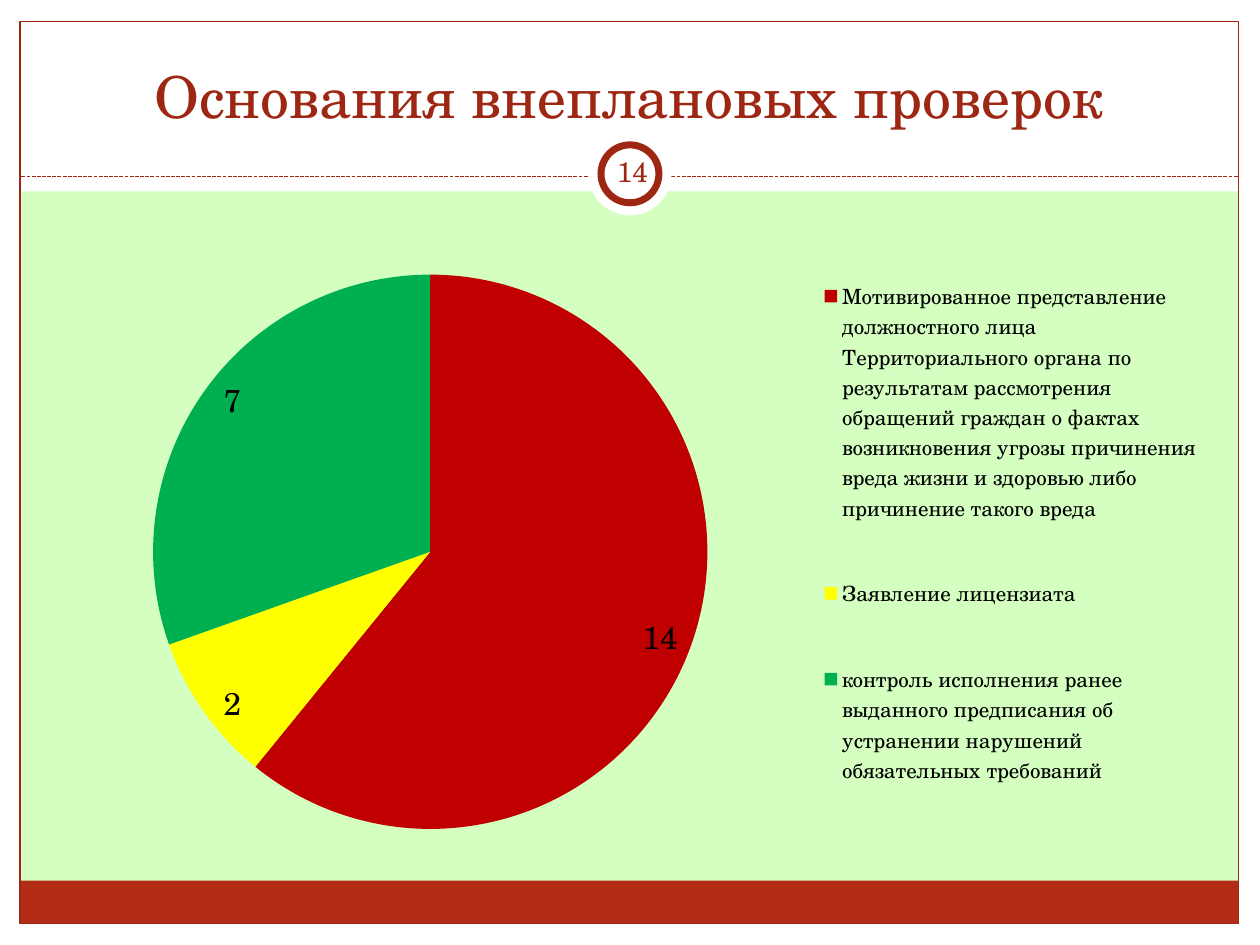
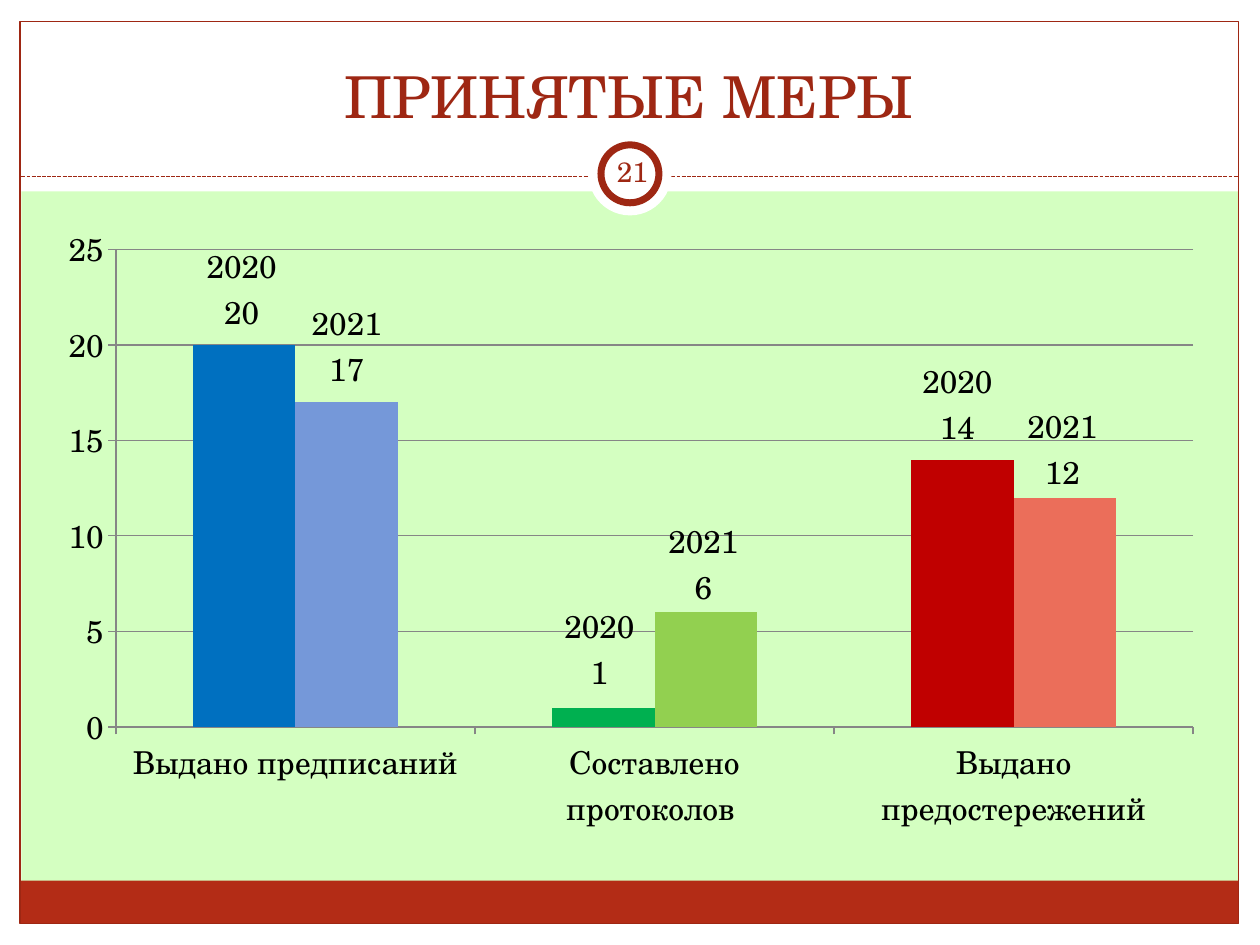
from lxml import etree
from pptx import Presentation
from pptx.chart.data import CategoryChartData
from pptx.dml.color import RGBColor
from pptx.enum.chart import XL_CHART_TYPE, XL_LABEL_POSITION, XL_LEGEND_POSITION, XL_TICK_MARK
from pptx.enum.dml import MSO_LINE
from pptx.enum.shapes import MSO_CONNECTOR, MSO_SHAPE
from pptx.enum.text import MSO_ANCHOR, PP_ALIGN
from pptx.oxml.ns import qn
from pptx.util import Inches, Pt

RECTANGLE, ELLIPSE = MSO_SHAPE.RECTANGLE, MSO_SHAPE.OVAL
PIE, COLUMNS = XL_CHART_TYPE.PIE, XL_CHART_TYPE.COLUMN_CLUSTERED
BEST_FIT, OUTSIDE_END = XL_LABEL_POSITION.BEST_FIT, XL_LABEL_POSITION.OUTSIDE_END
TICK_OUTSIDE = XL_TICK_MARK.OUTSIDE

FONT = "TeX Gyre Schola"
CHART_SIZE = (9.3, 5)
COLORS = {
    "background": "D4FFC1", "white": "FFFFFF", "black": "000000",
    "accent": "9E2713", "footer": "B32C16", "axis": "868686",
    "red": "C00000", "yellow": "FFFF00", "green": "00B050",
    "blue": "0070C0", "light blue": "7598D9",
    "light green": "92D050", "light red": "EB6E5A",
}
COLORS = {name: RGBColor.from_string(value) for name, value in COLORS.items()}


def write_text(shape, text, size, anchor):
    frame = shape.text_frame
    frame.word_wrap = True
    frame.vertical_anchor = anchor
    paragraph = frame.paragraphs[0]
    paragraph.alignment = PP_ALIGN.CENTER
    run = paragraph.add_run()
    run.text = text
    run.font.name, run.font.size = FONT, Pt(size)
    run.font.color.rgb = COLORS["accent"]


def set_layout(parent, inches, modes=(), after=None):
    """Place a chart part by inches within the chart: x, y and maybe w, h."""
    for old in parent.findall(qn("c:layout")):
        parent.remove(old)
    layout = etree.Element(qn("c:layout"))
    manual = etree.SubElement(layout, qn("c:manualLayout"))
    fractions = [value / CHART_SIZE[i % 2] for i, value in enumerate(inches)]
    for tag, value in [*modes, *zip("xywh", fractions)]:
        etree.SubElement(manual, qn(f"c:{tag}")).set("val", str(value))
    if after is None:
        parent.insert(0, layout)
    else:
        after.addnext(layout)


EDGE = [("xMode", "edge"), ("yMode", "edge")]
INNER_EDGE = [("layoutTarget", "inner"), *EDGE]

presentation = Presentation()
presentation.slide_width, presentation.slide_height = Inches(10), Inches(7.5)
title_layout = presentation.slide_layouts[5]
title_layout.background.fill.solid()
title_layout.background.fill.fore_color.rgb = COLORS["background"]

# Slides with title and page number
pages = [("Основания внеплановых проверок", "14"), ("ПРИНЯТЫЕ МЕРЫ", "21")]
slides = []
for title_text, number in pages:
    slide = presentation.slides.add_slide(title_layout)
    slides.append(slide)
    title = slide.shapes.title
    title.left, title.top = Inches(0.33), Inches(0.25)
    title.width, title.height = Inches(9.33), Inches(0.83)
    write_text(title, title_text, 33, MSO_ANCHOR.BOTTOM)
    badge = slide.shapes.add_textbox(Inches(4.77), Inches(1.12), Inches(0.5), Inches(0.48))
    frame = badge.text_frame
    frame.margin_left = frame.margin_right = Inches(0.05)
    frame.margin_top = frame.margin_bottom = Inches(0.05)
    write_text(badge, number, 16, MSO_ANCHOR.MIDDLE)

# Shared frame: drawn once, then moved into the layout
frame_shapes = [
    (RECTANGLE, (0, 7.33, 10, 0.17), "white", None),
    (RECTANGLE, (0, 0, 10, 1.52), "white", None),
    (RECTANGLE, (0, 0, 0.17, 7.5), "white", None),
    (RECTANGLE, (9.83, 0, 0.17, 7.5), "white", None),
    (RECTANGLE, (0.16, 6.99, 9.67, 0.34), "footer", None),
    (RECTANGLE, (0.16, 0.17, 9.67, 7.16), None, 0.75),
    (ELLIPSE, (4.67, 1.05, 0.66, 0.66), "white", None),
    (ELLIPSE, (4.77, 1.15, 0.46, 0.46), "white", 4),
]
decorations = []
for preset, box, fill, line_width in frame_shapes:
    shape = slides[0].shapes.add_shape(preset, *map(Inches, box))
    shape.shadow.inherit = False
    if fill:
        shape.fill.solid()
        shape.fill.fore_color.rgb = COLORS[fill]
    else:
        shape.fill.background()
    if line_width:
        shape.line.color.rgb = COLORS["accent"]
        shape.line.width = Pt(line_width)
    else:
        shape.line.fill.background()
    decorations.append(shape)

divider = slides[0].shapes.add_connector(
    MSO_CONNECTOR.STRAIGHT, Inches(0.17), Inches(1.4), Inches(9.83), Inches(1.4))
divider.line.color.rgb = COLORS["accent"]
divider.line.width = Pt(0.75)
divider.line.dash_style = MSO_LINE.SQUARE_DOT
properties = divider.element.find(qn("p:spPr"))
etree.SubElement(properties, qn("a:effectLst"))
decorations.insert(6, divider)  # below the badge circles

for shape_id, shape in enumerate(decorations, start=100):
    next(shape.element.iter(qn("p:cNvPr"))).set("id", str(shape_id))
    title_layout.shapes.element.append(shape.element)

# Charts
chart_specs = [
    {
        "type": PIE, "corner": (0.33, 1.67), "plot": (0.04, 0.51, 6.09, 4.4),
        "categories": [
            "Мотивированное представление должностного лица Территориального органа "
            "по результатам рассмотрения обращений граждан о фактах возникновения "
            "угрозы причинения вреда жизни и здоровью либо причинение такого вреда",
            "Заявление лицензиата",
            "контроль исполнения ранее выданного предписания об устранении нарушений "
            "обязательных требований",
        ],
        "series": [("Основания", (14, 2, 7), ("red", "yellow", "green"))],
        "label position": BEST_FIT,
    },
    {
        "type": COLUMNS, "corner": (0.35, 1.7), "plot": (0.57, 0.28, 8.55, 3.79),
        "categories": ["Выдано предписаний", "Составлено протоколов ", "Выдано предостережений"],
        "series": [("2020", (20, 1, 14), ("blue", "green", "red")),
                   ("2021", (17, 6, 12), ("light blue", "light green", "light red"))],
        "label position": OUTSIDE_END,
    },
]
charts = []
for slide, settings in zip(slides, chart_specs):
    data = CategoryChartData()
    data.categories = settings["categories"]
    for name, values, _ in settings["series"]:
        data.add_series(name, values)
    chart = slide.shapes.add_chart(
        settings["type"], *map(Inches, settings["corner"] + CHART_SIZE), data).chart
    charts.append(chart)
    chart.has_title = chart.has_legend = False
    chart.font.name, chart.font.size = FONT, Pt(18)
    chart.font.color.rgb = COLORS["black"]
    set_layout(next(chart.element.iter(qn("c:plotArea"))), settings["plot"], INNER_EDGE)
    chart.plots[0].vary_by_categories = settings["type"] == PIE
    for series, (_, _, point_colors) in zip(chart.plots[0].series, settings["series"]):
        for index, color in enumerate(point_colors):
            fill = series.points[index].format.fill
            fill.solid()
            fill.fore_color.rgb = COLORS[color]
        labels = series.data_labels
        labels.show_value = True
        labels.position = settings["label position"]
pie_chart, column_chart = charts

# Pie legend
pie_chart.has_legend = True
legend = pie_chart.legend
legend.position = XL_LEGEND_POSITION.RIGHT
legend.include_in_layout = False
legend.font.name, legend.font.size = FONT, Pt(12)
legend.font.color.rgb = COLORS["black"]
legend_element = next(pie_chart.element.iter(qn("c:legend")))
set_layout(legend_element, (6.11, 0.12, 3.16, 4.88), EDGE,
           after=legend_element.find(qn("c:legendPos")))

# Column axes and gridlines
column_chart.plots[0].gap_width = 150
column_chart.plots[0].overlap = 0
value_axis, category_axis = column_chart.value_axis, column_chart.category_axis
value_axis.minimum_scale, value_axis.maximum_scale = 0, 25
value_axis.major_unit = 5
value_axis.has_major_gridlines = True
for axis in (value_axis, category_axis):
    axis.major_tick_mark = TICK_OUTSIDE
for lines in (value_axis, category_axis, value_axis.major_gridlines):
    lines.format.line.color.rgb = COLORS["axis"]
    lines.format.line.width = Pt(0.75)

# Two-line column labels, each nudged from its bar's end
label_shifts = [
    [(-0.02, -0.04), (-0.03, -0.06), (-0.04, -0.04)],
    [(0, -0.04), (-0.02, 0.02), (-0.02, 0.02)],
]
for series, shifts in zip(column_chart.plots[0].series, label_shifts):
    for index in range(len(shifts)):
        series.points[index].data_label.position = OUTSIDE_END
label_elements = column_chart.element.iter(qn("c:dLbl"))
for label, shift in zip(label_elements, sum(label_shifts, [])):
    set_layout(label, shift, after=label.find(qn("c:idx")))
for labels in column_chart.element.iter(qn("c:dLbls"), qn("c:dLbl")):
    labels.find(qn("c:showSerName")).set("val", "1")
    separator = etree.Element(qn("c:separator"))
    separator.text = "\n"
    labels.find(qn("c:showBubbleSize")).addnext(separator)

presentation.save("out.pptx")
